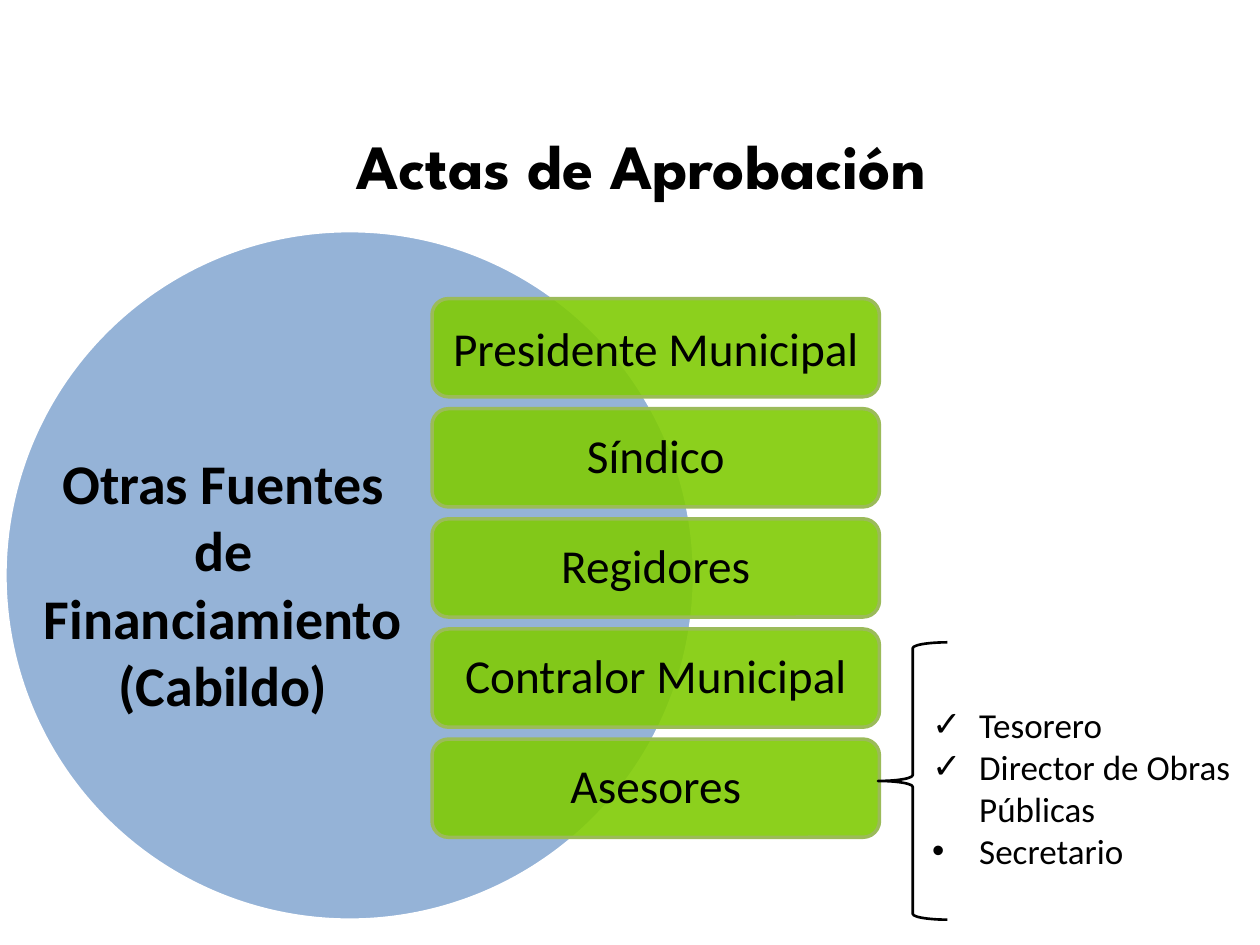
from dataclasses import dataclass
from typing import Any

from lxml import etree
from pptx import Presentation
from pptx.dml.color import RGBColor
from pptx.enum.shapes import MSO_SHAPE
from pptx.enum.text import MSO_ANCHOR, PP_ALIGN
from pptx.oxml.ns import qn
from pptx.util import Cm, Pt

CENTER, LEFT = PP_ALIGN.CENTER, PP_ALIGN.LEFT
MIDDLE, TOP = MSO_ANCHOR.MIDDLE, MSO_ANCHOR.TOP
OVAL = MSO_SHAPE.OVAL
ROUNDED = MSO_SHAPE.ROUNDED_RECTANGLE
BRACE = MSO_SHAPE.LEFT_BRACE
TITLE_ONLY = 5

BLACK, WHITE = "000000", "FFFFFF"
BLUE, GREEN, OLIVE = "95B3D7", "80CB05", "9BBB59"


@dataclass
class Box:
    left: float
    top: float
    width: float
    height: float

    def lengths(self) -> tuple:
        return Cm(self.left), Cm(self.top), Cm(self.width), Cm(self.height)


@dataclass
class Role:
    name: str
    line_spacing: float = 0.9


@dataclass
class Advisor:
    name: str
    bullet: str


ROLES = [
    Role("Presidente Municipal", 1.0),
    Role("Síndico"),
    Role("Regidores"),
    Role("Contralor Municipal"),
    Role("Asesores"),
]
ROLE_BOX = Box(8.71, 6.02, 9.02, 1.98)
ROLE_PITCH = 2.22
ADVISORS = [
    Advisor("Tesorero", "✓"),
    Advisor("Director de Obras Públicas", "✓"),
    Advisor("Secretario", "•"),
]


def color(value: str) -> RGBColor:
    return RGBColor.from_string(value)


def format_paragraph(paragraph: Any, size: float, alignment: Any = CENTER,
                     font_name: str = "Calibri", bold: bool = False) -> None:
    paragraph.alignment = alignment
    formats = {"size": Pt(size), "name": font_name, "bold": bold}
    for attribute, value in formats.items():
        setattr(paragraph.font, attribute, value)
    paragraph.font.color.rgb = color(BLACK)


def format_frame(text_frame: Any, anchor: Any, inset: float = 0.25) -> None:
    formats = {"word_wrap": True, "vertical_anchor": anchor,
               "margin_left": Cm(inset), "margin_right": Cm(inset)}
    for attribute, value in formats.items():
        setattr(text_frame, attribute, value)


def add_figure(slide: Any, preset: Any, box: Box, fill: str | None,
               line: str, line_width: float) -> Any:
    shape = slide.shapes.add_shape(preset, *box.lengths())
    shape.shadow.inherit = False
    if fill:
        shape.fill.solid()
        shape.fill.fore_color.rgb = color(fill)
    else:
        shape.fill.background()
    shape.line.color.rgb = color(line)
    shape.line.width = Pt(line_width)
    return shape


def set_opacity(shape: Any, percent: int) -> None:
    fill_color = shape.fill._xPr.find(qn("a:solidFill"))[0]
    etree.SubElement(fill_color, qn("a:alpha"), val=str(percent * 1000))


def add_bullet(paragraph: Any, character: str) -> None:
    properties = paragraph._p.get_or_add_pPr()
    properties.set("marL", str(Cm(0.95)))
    properties.set("indent", str(-Cm(0.95)))
    etree.SubElement(properties, qn("a:buFont"), typeface="Arial")
    etree.SubElement(properties, qn("a:buChar"), char=character)


def add_title(slide: Any, text: str, box: Box) -> None:
    title = slide.shapes.title
    title.left, title.top, title.width, title.height = box.lengths()
    title.text_frame.text = text
    format_frame(title.text_frame, MIDDLE)
    format_paragraph(title.text_frame.paragraphs[0], 36, font_name="League Spartan", bold=True)


def add_role(slide: Any, role: Role, box: Box) -> None:
    shape = add_figure(slide, ROUNDED, box, GREEN, OLIVE, 2)
    set_opacity(shape, 90)
    shape.text_frame.text = role.name
    format_frame(shape.text_frame, MIDDLE, 0.28)
    paragraph = shape.text_frame.paragraphs[0]
    paragraph.line_spacing = role.line_spacing
    format_paragraph(paragraph, 27)


def add_source_label(slide: Any, text: str, box: Box) -> None:
    text_frame = slide.shapes.add_textbox(*box.lengths()).text_frame
    text_frame.text = text
    format_frame(text_frame, TOP)
    format_paragraph(text_frame.paragraphs[0], 32, bold=True)


def add_advisors(slide: Any, advisors: list[Advisor], box: Box) -> None:
    text_frame = slide.shapes.add_textbox(*box.lengths()).text_frame
    format_frame(text_frame, TOP)
    for index, advisor in enumerate(advisors):
        paragraph = text_frame.add_paragraph() if index else text_frame.paragraphs[0]
        paragraph.text = advisor.name
        add_bullet(paragraph, advisor.bullet)
        format_paragraph(paragraph, 20, LEFT)


def main() -> None:
    presentation = Presentation()
    presentation.slide_width, presentation.slide_height = Cm(25.4), Cm(19.05)
    slide = presentation.slides.add_slide(presentation.slide_layouts[TITLE_ONLY])
    add_title(slide, "Actas de Aprobación", Box(1.5, 1.73, 22.86, 3.18))
    add_figure(slide, OVAL, Box(0.1, 4.65, 13.9, 13.9), BLUE, WHITE, 2)
    for index, role in enumerate(ROLES):
        top = ROLE_BOX.top + index * ROLE_PITCH
        add_role(slide, role, Box(ROLE_BOX.left, top, ROLE_BOX.width, ROLE_BOX.height))
    add_source_label(slide, "Otras Fuentes de Financiamiento (Cabildo)", Box(0.5, 8.92, 8, 5.74))
    add_figure(slide, BRACE, Box(17.7, 12.95, 1.4, 5.59), None, BLACK, 1.5)
    add_advisors(slide, ADVISORS, Box(18.54, 14.05, 6.76, 3.7))
    presentation.save("out.pptx")


if __name__ == "__main__":
    main()
